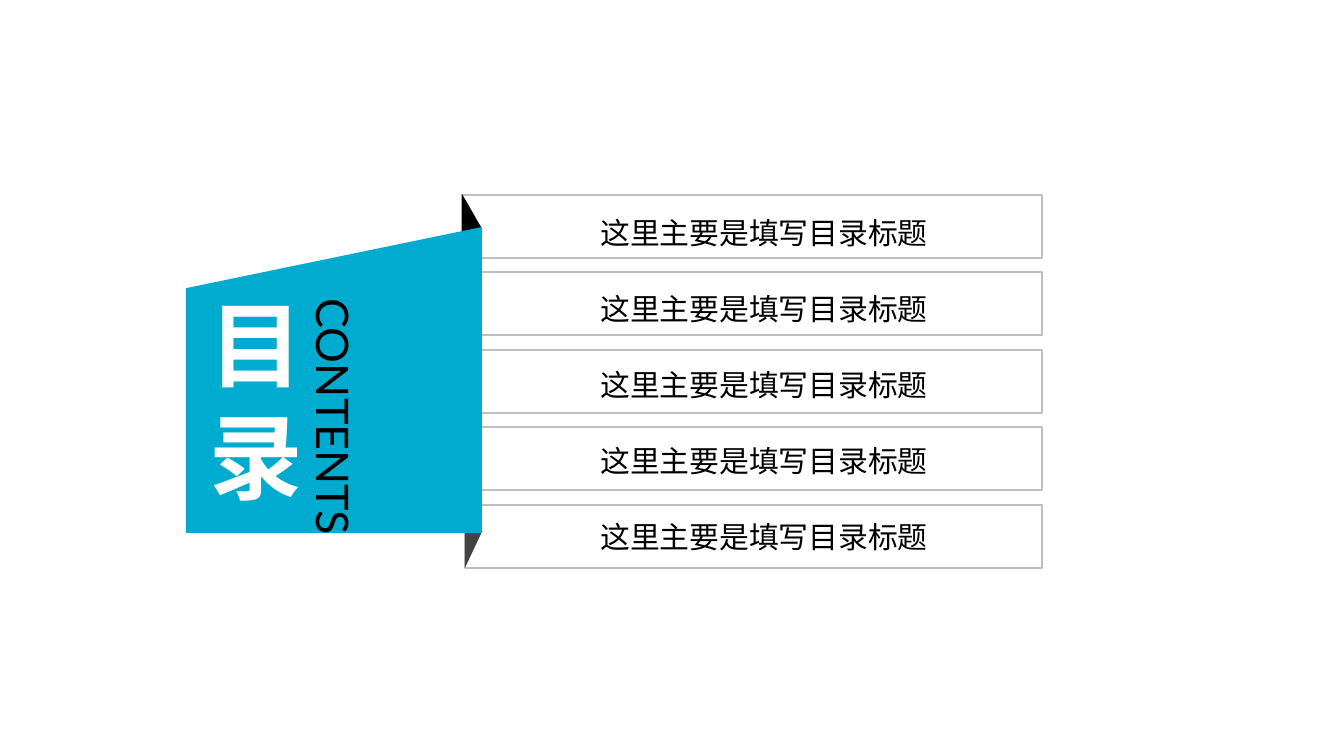
from pptx import Presentation
from pptx.dml.color import RGBColor
from pptx.enum.shapes import MSO_SHAPE as Shape
from pptx.enum.text import MSO_AUTO_SIZE as AutoSize, PP_ALIGN as Align
from pptx.oxml.ns import qn
from pptx.util import Pt
from lxml.etree import SubElement

SCALE = 914400 / 134.4  # EMU per px
COLORS = {
    "white": "FFFFFF",
    "black": "000000",
    "border": "BFBFBF",
    "fold": "434343",
    "panel": "00ABD0",
}
CJK = "Noto Sans CJK SC"
ENTRIES = ["这里主要是填写目录标题"] * 5


def px(*lengths):
    return [round(length * SCALE) for length in lengths]


def color(name):
    return RGBColor.from_string(COLORS[name])


def paint(shape, fill, line=None):
    shape.shadow.inherit = False
    shape.fill.solid()
    shape.fill.fore_color.rgb = color(fill)
    if line:
        shape.line.color.rgb = color(line)
        shape.line.width = Pt(1)
    else:
        shape.line.fill.background()


def add_block(page, kind, area, fill, line=None):
    paint(page.shapes.add_shape(kind, *px(*area)), fill, line)


def add_fold(page, points, fill):
    """Draw one folded ribbon end through the given corners."""
    builder = page.shapes.build_freeform(*points[0], scale=SCALE)
    builder.add_line_segments(points[1:], close=True)
    paint(builder.convert_to_shape(), fill)


def add_text(page, area, text, ink, align=Align.LEFT, rotation=0, **font):
    box = page.shapes.add_textbox(*px(*area))
    box.rotation = rotation
    frame = box.text_frame
    frame.word_wrap = True
    frame.auto_size = AutoSize.SHAPE_TO_FIT_TEXT
    para = frame.paragraphs[0]
    para.alignment = align
    span = para.add_run()
    span.text = text
    span.font.color.rgb = color(ink)
    for key, value in font.items():
        setattr(span.font, key, value)
    # East Asian glyphs take their typeface from a:ea
    SubElement(span.font._element, qn("a:ea"), typeface=font["name"])


def main():
    deck = Presentation()
    deck.slide_width, deck.slide_height = px(1344, 756)
    page = deck.slides.add_slide(deck.slide_layouts[6])

    right = 1042
    for row in range(len(ENTRIES)):
        left = 465 if row else 462
        top = 195 + row * 310 // 4
        add_block(page, Shape.RECTANGLE, (left, top, right - left, 63), "white", "border")

    add_fold(page, [(462, 194), (481, 227), (481, 290), (462, 258)], "black")
    add_fold(page, [(465, 504), (481, 472), (481, 534), (465, 568)], "fold")
    add_block(page, Shape.FLOWCHART_MANUAL_INPUT, (186, 227, 296, 306), "panel")

    add_text(page, (196, 281, 63, 239), "目录", "white", Align.JUSTIFY,
             name=CJK, size=Pt(50), bold=True)
    add_text(page, (192, 392, 282, 69), "CONTENTS", "black", rotation=90,
             name="Lato", size=Pt(24))
    for row, entry in enumerate(ENTRIES):
        add_text(page, (587, 208 + 76 * row, 413, 50), entry, "black",
                 name=CJK, size=Pt(16))

    deck.save("out.pptx")


if __name__ == "__main__":
    main()
